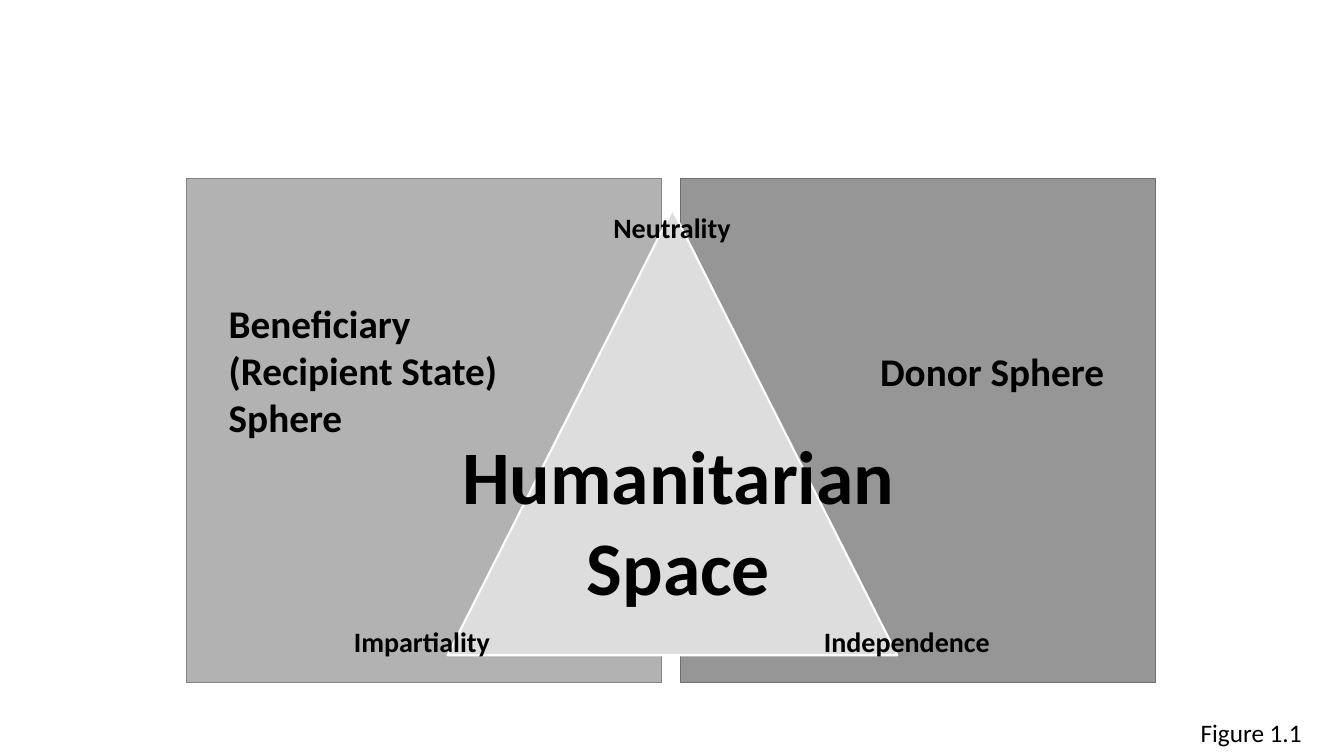
import pptx
import pptx.dml.color
import pptx.enum.shapes
import pptx.enum.text
import pptx.util

Inches = pptx.util.Inches
Pt = pptx.util.Pt
RGBColor = pptx.dml.color.RGBColor
MSO_SHAPE = pptx.enum.shapes.MSO_SHAPE
LEFT = pptx.enum.text.PP_ALIGN.LEFT
CENTER = pptx.enum.text.PP_ALIGN.CENTER

BLACK = RGBColor(0x00, 0x00, 0x00)
WHITE = RGBColor(0xFF, 0xFF, 0xFF)
DONOR_GRAY = RGBColor(0x96, 0x96, 0x96)
DONOR_EDGE = RGBColor(0x6F, 0x6F, 0x6F)
BENEFICIARY_GRAY = RGBColor(0xB2, 0xB2, 0xB2)
BENEFICIARY_EDGE = RGBColor(0x84, 0x84, 0x84)
SPACE_GRAY = RGBColor(0xDD, 0xDD, 0xDD)

# Preset, (left, top, width, height), fill, line colour, line width
AREAS = [
    (MSO_SHAPE.RECTANGLE, (6.75, 1.77, 4.71, 5), DONOR_GRAY, DONOR_EDGE, 1),
    (MSO_SHAPE.RECTANGLE, (1.85, 1.77, 4.71, 5), BENEFICIARY_GRAY, BENEFICIARY_EDGE, 1),
    (MSO_SHAPE.ISOSCELES_TRIANGLE, (4.44, 2.08, 4.46, 4.42), SPACE_GRAY, WHITE, 1.5),
]

CAPTION = {"size": Pt(18), "bold": False}
SPHERE = {"size": Pt(28), "bold": True}
TITLE = {"size": Pt(54), "bold": True}
PRINCIPLE = {"size": Pt(20), "bold": True}

# Paragraphs, (left, top, width, height), alignment, font format
LABELS = [
    (["Figure 1.1"], (11.81, 7.07, 1.52, 0.4), LEFT, CAPTION),
    (["Beneficiary", "(Recipient State)", "Sphere"], (2.17, 2.92, 2.98, 1.51), LEFT, SPHERE),
    (["Donor Sphere"], (8.63, 3.4, 2.98, 0.57), LEFT, SPHERE),
    (["Humanitarian Space"], (3.86, 4.21, 5.74, 1.92), CENTER, TITLE),
    (["Neutrality"], (5.85, 2.04, 1.63, 0.44), CENTER, PRINCIPLE),
    (["Impartiality"], (3.37, 6.15, 1.63, 0.44), CENTER, PRINCIPLE),
    (["Independence"], (7.73, 6.15, 2.53, 0.44), CENTER, PRINCIPLE),
]


def add_area(slide, preset, box, fill, edge, edge_width):
    shape = slide.shapes.add_shape(preset, *map(Inches, box))
    shape.shadow.inherit = False
    shape.fill.solid()
    shape.fill.fore_color.rgb = fill
    shape.line.color.rgb = edge
    shape.line.width = Pt(edge_width)


def add_label(slide, lines, box, alignment, font_format):
    text_frame = slide.shapes.add_textbox(*map(Inches, box)).text_frame
    text_frame.word_wrap = True
    text_frame.auto_size = pptx.enum.text.MSO_AUTO_SIZE.SHAPE_TO_FIT_TEXT
    text_frame.text = "\n".join(lines)
    for paragraph in text_frame.paragraphs:
        paragraph.alignment = alignment
        font = paragraph.runs[0].font
        font.color.rgb = BLACK
        for name, value in {"name": "Calibri", **font_format}.items():
            setattr(font, name, value)


def main():
    presentation = pptx.Presentation()
    presentation.slide_width = Inches(13.33)
    presentation.slide_height = Inches(7.5)
    slide = presentation.slides.add_slide(presentation.slide_layouts[6])
    for area in AREAS:
        add_area(slide, *area)
    for label in LABELS:
        add_label(slide, *label)
    presentation.save("out.pptx")


if __name__ == "__main__":
    main()
